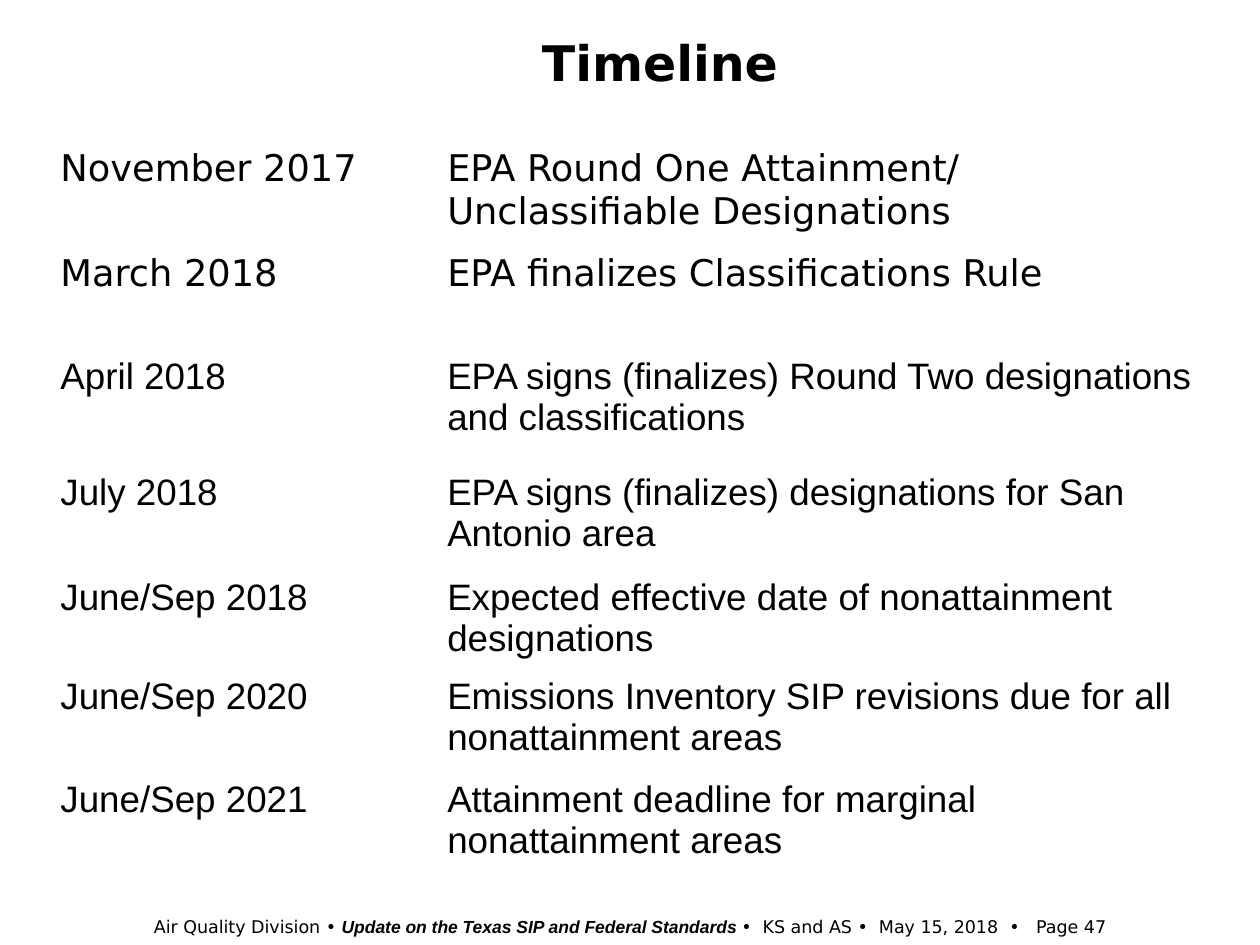
from pptx import Presentation
from pptx.dml.color import RGBColor
from pptx.enum.text import MSO_ANCHOR, PP_ALIGN
from pptx.util import Inches, Pt

BLACK = RGBColor(0x00, 0x00, 0x00)
WHITE = RGBColor(0xFF, 0xFF, 0xFF)
CENTER = PP_ALIGN.CENTER
MIDDLE = MSO_ANCHOR.MIDDLE
SANS = "DejaVu Sans"
ARIAL = "Arial"

COLUMN_WIDTHS = [3.07, 6.17]
# row height, font, date, milestone
MILESTONES = [
    (0.83, SANS, "November 2017", "EPA Round One Attainment/ Unclassifiable Designations"),
    (0.83, SANS, "March 2018", "EPA finalizes Classifications Rule"),
    (0.92, ARIAL, "April 2018", "EPA signs (finalizes) Round Two designations and classifications"),
    (0.83, ARIAL, "July 2018", "EPA signs (finalizes) designations for San Antonio area"),
    (0.79, ARIAL, "June/Sep 2018", "Expected effective date of nonattainment designations"),
    (0.82, ARIAL, "June/Sep 2020", "Emissions Inventory SIP revisions due for all nonattainment areas"),
    (0.83, ARIAL, "June/Sep 2021", "Attainment deadline for marginal nonattainment areas"),
]
FOOTER = [
    ("Air Quality Division • ", SANS, False),
    ("Update on the Texas SIP and Federal Standards ", ARIAL, True),
    ("•  KS and AS •  May 15, 2018  •   Page 47", SANS, False),
]


def style(font, name, size, emphasis=False):
    font.name = name
    font.size = Pt(size)
    font.bold = emphasis
    font.color.rgb = BLACK


def add_centered_line(left, top, width, height):
    """Add a text box and return its single centred paragraph."""
    frame = slide.shapes.add_textbox(
        Inches(left), Inches(top), Inches(width), Inches(height)).text_frame
    frame.word_wrap = True
    frame.vertical_anchor = MIDDLE
    frame.paragraphs[0].alignment = CENTER
    return frame.paragraphs[0]


prs = Presentation()
prs.slide_width, prs.slide_height = Inches(10), Inches(7.5)
slide = prs.slides.add_slide(prs.slide_layouts[6])

# Footer
footer = add_centered_line(0, 7.22, 10, 0.27)
for words, font_name, emphasis in FOOTER:
    run = footer.add_run()
    run.text = words
    style(run.font, font_name, 10, emphasis)
    run.font.italic = emphasis

# Title
title = add_centered_line(1.17, 0.08, 8, 0.83)
title.text = " Timeline"
style(title.font, SANS, 28, True)

# Timeline table
timeline = slide.shapes.add_table(
    len(MILESTONES), len(COLUMN_WIDTHS), Inches(0.43), Inches(1.17),
    Inches(sum(COLUMN_WIDTHS)), Inches(sum(m[0] for m in MILESTONES))).table
timeline.first_row = False
timeline.horz_banding = False
for column, width in zip(timeline.columns, COLUMN_WIDTHS):
    column.width = Inches(width)

for row, (height, font_name, *entries) in zip(timeline.rows, MILESTONES):
    row.height = Inches(height)
    for cell, words in zip(row.cells, entries):
        cell.fill.solid()
        cell.fill.fore_color.rgb = WHITE
        cell.margin_left = cell.margin_right = Inches(0.05)
        cell.margin_top = cell.margin_bottom = 0
        paragraph = cell.text_frame.paragraphs[0]
        paragraph.text = words
        paragraph.space_after = Pt(6)
        style(paragraph.font, font_name, 21)

prs.save("out.pptx")
